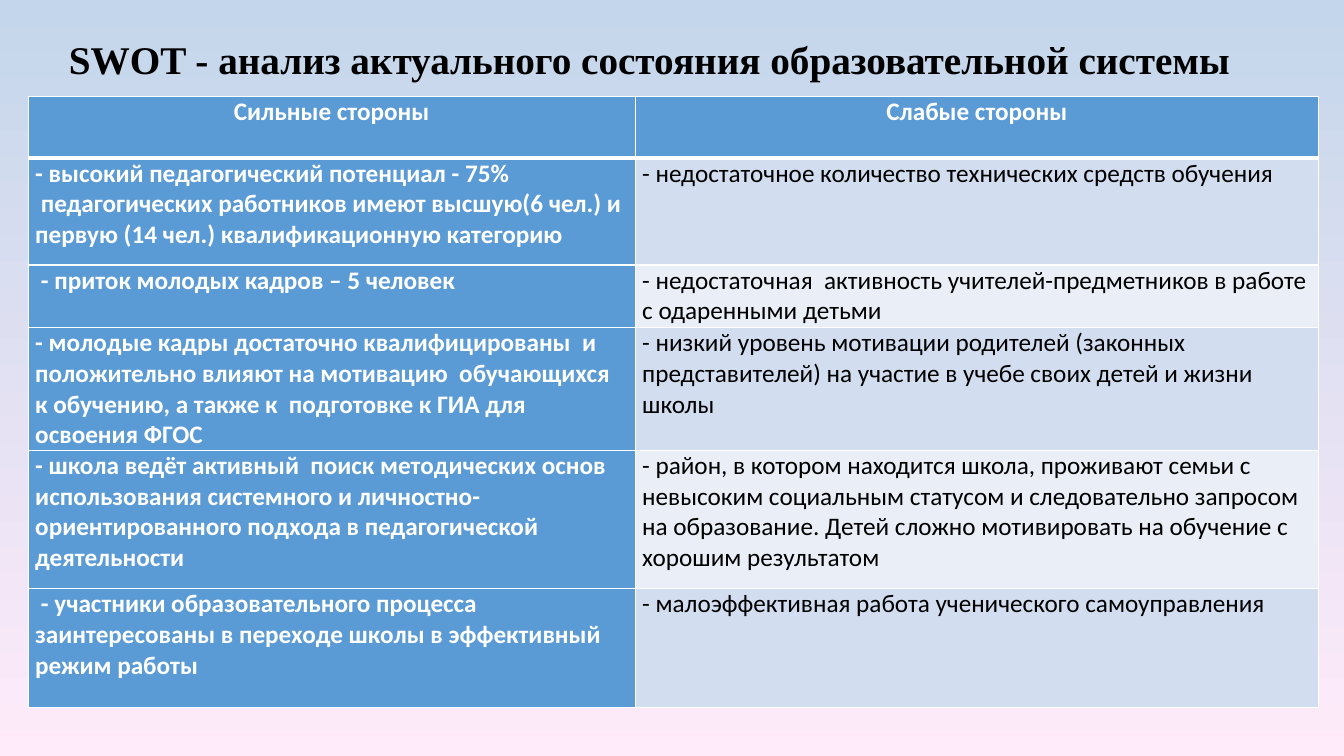
from typing import NamedTuple

from lxml import etree
from pptx import Presentation
from pptx.dml.color import RGBColor
from pptx.enum import text
from pptx.oxml import ns
from pptx.util import Inches, Pt

COLORS = {
    "sky": "C4D6EB",
    "pink": "FFEBFA",
    "blue": "5B9BD5",
    "band_dark": "D2DEEF",
    "band_light": "EAEFF7",
    "white": "FFFFFF",
    "black": "000000",
}
TITLE = "SWOT - анализ актуального состояния образовательной системы"
COLUMN_WIDTHS = (6.02, 6.78)
THIN, THICK = 1, 3


class SwotRow(NamedTuple):
    height: float
    strengths: tuple[str, ...]
    weaknesses: str


HEADER = SwotRow(0.61, ("Сильные стороны",), "Слабые стороны")
ROWS = (
    SwotRow(
        1.06,
        (
            "- высокий педагогический потенциал - 75%",
            " педагогических работников имеют высшую(6 чел.) и "
            "первую (14 чел.) квалификационную категорию",
        ),
        "- недостаточное количество технических средств обучения",
    ),
    SwotRow(
        0.62,
        (" - приток молодых кадров – 5 человек",),
        "- недостаточная  активность учителей-предметников в работе "
        "с одаренными детьми",
    ),
    SwotRow(
        1.22,
        (
            "- молодые кадры достаточно квалифицированы  и положительно влияют "
            "на мотивацию  обучающихся к обучению, а также к  подготовке к ГИА "
            "для освоения ФГОС",
        ),
        "- низкий уровень мотивации родителей (законных представителей) "
        "на участие в учебе своих детей и жизни школы",
    ),
    SwotRow(
        1.37,
        (
            "- школа ведёт активный  поиск методических основ использования "
            "системного и личностно- ориентированного подхода "
            "в педагогической деятельности",
        ),
        "- район, в котором находится школа, проживают семьи с невысоким "
        "социальным статусом и следовательно запросом на образование. "
        "Детей сложно мотивировать на обучение с хорошим результатом",
    ),
    SwotRow(
        1.18,
        (
            " - участники образовательного процесса заинтересованы "
            "в переходе школы в эффективный режим работы",
        ),
        "- малоэффективная работа ученического самоуправления",
    ),
)


def rgb(name: str) -> RGBColor:
    return RGBColor.from_string(COLORS[name])


def add_run(paragraph, words: str, font: str, size: int, color: str, bold: bool) -> None:
    run = paragraph.add_run()
    run.text = words
    run.font.name = font
    run.font.size = Pt(size)
    run.font.bold = bold
    run.font.color.rgb = rgb(color)


def paint_background(slide) -> None:
    fill = slide.background.fill
    fill.gradient()
    fill.gradient_angle = 270
    for stop, color in zip(fill.gradient_stops, ("sky", "pink")):
        stop.color.rgb = rgb(color)


def add_title(slide) -> None:
    box = slide.shapes.add_textbox(Inches(0.46), Inches(0.17), Inches(11.96), Inches(0.88))
    frame = box.text_frame
    frame.word_wrap = True
    frame.vertical_anchor = text.MSO_ANCHOR.MIDDLE
    heading = frame.paragraphs[0]
    heading.alignment = text.PP_ALIGN.CENTER
    heading.line_spacing = 0.9
    add_run(heading, TITLE, "Times New Roman", 28, "black", True)


def add_borders(cell, top: int, bottom: int) -> None:
    """Draw white cell edges; widths are in points."""
    properties = cell._tc.get_or_add_tcPr()
    for side, width in (("L", THIN), ("R", THIN), ("T", top), ("B", bottom)):
        line = etree.SubElement(properties, ns.qn(f"a:ln{side}"), w=str(Pt(width)))
        solid = etree.SubElement(line, ns.qn("a:solidFill"))
        etree.SubElement(solid, ns.qn("a:srgbClr"), val=COLORS["white"])


def fill_cell(cell, lines: tuple[str, ...], fill: str, strong: bool, centered: bool) -> None:
    cell.margin_left = cell.margin_right = Inches(0.07)
    cell.margin_top = cell.margin_bottom = 0
    cell.fill.solid()
    cell.fill.fore_color.rgb = rgb(fill)
    frame = cell.text_frame
    for index, words in enumerate(lines):
        paragraph = frame.add_paragraph() if index else frame.paragraphs[0]
        paragraph.alignment = text.PP_ALIGN.CENTER if centered else text.PP_ALIGN.LEFT
        add_run(paragraph, words, "Calibri", 18, "white" if strong else "black", strong)


def add_swot_table(slide) -> None:
    swot_rows = (HEADER, *ROWS)
    table = slide.shapes.add_table(
        len(swot_rows), len(COLUMN_WIDTHS), Inches(0.28), Inches(0.96),
        Inches(sum(COLUMN_WIDTHS)), Inches(sum(row.height for row in swot_rows)),
    ).table
    for column, width in zip(table.columns, COLUMN_WIDTHS):
        column.width = Inches(width)
    for r, row in enumerate(swot_rows):
        table.rows[r].height = Inches(row.height)
        is_header = r == 0
        band = "band_dark" if r % 2 else "band_light"
        for c, lines in enumerate((row.strengths, (row.weaknesses,))):
            strong = is_header or c == 0
            cell = table.cell(r, c)
            add_borders(cell, THICK if r == 1 else THIN, THICK if is_header else THIN)
            fill_cell(cell, lines, "blue" if strong else band, strong, is_header)


def main() -> None:
    deck = Presentation()
    deck.slide_width, deck.slide_height = Inches(13.33), Inches(7.5)
    slide = deck.slides.add_slide(deck.slide_layouts[6])
    paint_background(slide)
    add_title(slide)
    add_swot_table(slide)
    deck.save("out.pptx")


if __name__ == "__main__":
    main()
